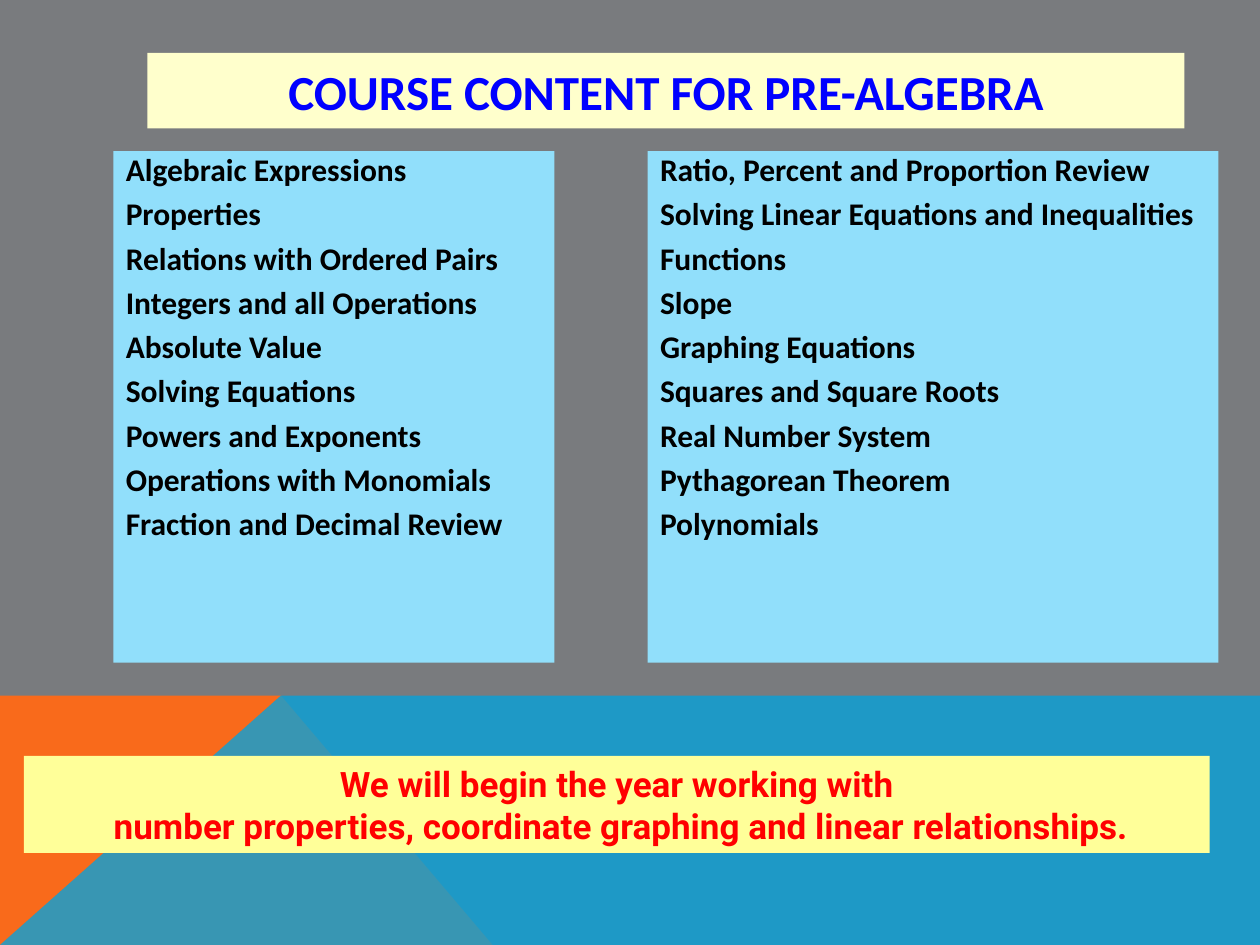
from lxml import etree
from pptx import Presentation
from pptx import util as u
from pptx.dml.color import RGBColor
from pptx.enum import shapes, text
from pptx.oxml.ns import qn

COLORS = {
    "background": "797B7E",
    "orange": "F96A1B",
    "blue": "08A1D9",
    "panel": "91DFFB",
    "title_fill": "FFFFCC",
    "title_text": "0000FF",
    "note_fill": "FFFF99",
    "note_text": "FF0000",
    "black": "000000",
}

FIRST_TOPICS = [
    "Algebraic Expressions",
    "Properties",
    "Relations with Ordered Pairs",
    "Integers and all Operations",
    "Absolute Value",
    "Solving Equations",
    "Powers and Exponents",
    "Operations with Monomials",
    "Fraction and Decimal Review",
]
SECOND_TOPICS = [
    "Ratio, Percent and Proportion Review",
    "Solving Linear Equations and Inequalities",
    "Functions",
    "Slope",
    "Graphing Equations",
    "Squares and Square Roots",
    "Real Number System",
    "Pythagorean Theorem",
    "Polynomials",
]
NOTE = [
    "We will begin the year working with",
    " number properties, coordinate graphing and linear relationships.",
]


class Deck:
    def __init__(self, width, height):
        self.prs = Presentation()
        self.prs.slide_width = u.Inches(width)
        self.prs.slide_height = u.Inches(height)
        self.s = self.prs.slides.add_slide(self.prs.slide_layouts[6])

    def color(self, name):
        return RGBColor.from_string(COLORS[name])

    def paint(self, sp, fill):
        sp.shadow.inherit = False
        sp.fill.solid()
        sp.fill.fore_color.rgb = self.color(fill)
        sp.line.fill.background()

    def background(self, fill):
        bg = self.s.background.fill
        bg.solid()
        bg.fore_color.rgb = self.color(fill)

    def polygon(self, points, fill, opacity=100):
        corners = [(u.Inches(x), u.Inches(y)) for x, y in points]
        builder = self.s.shapes.build_freeform(*corners[0])
        builder.add_line_segments(corners[1:], close=True)
        sp = builder.convert_to_shape()
        self.paint(sp, fill)
        if opacity < 100:
            rgb = sp.fill._xPr.find(qn("a:solidFill"))[0]
            etree.SubElement(rgb, qn("a:alpha")).set("val", str(opacity * 1000))

    def text_panel(self, box, fill, lines, font, size, color, centered=True):
        sp = self.s.shapes.add_shape(
            shapes.MSO_SHAPE.RECTANGLE, *[u.Inches(v) for v in box])
        self.paint(sp, fill)
        tf = sp.text_frame
        tf.word_wrap = True
        tf.vertical_anchor = text.MSO_ANCHOR.MIDDLE if centered else text.MSO_ANCHOR.TOP
        tf.text = "\n".join(lines)
        for p in tf.paragraphs:
            p.alignment = text.PP_ALIGN.CENTER if centered else text.PP_ALIGN.LEFT
            for r in p.runs:
                r.font.name = font
                r.font.size = u.Pt(size)
                r.font.bold = True
                r.font.color.rgb = self.color(color)
        return tf

    def topic_list(self, left, width, topics):
        tf = self.text_panel((left, 1.2, width, 4.06), "panel", topics,
                             "Calibri", 18, "black", centered=False)
        for p in tf.paragraphs:
            p.line_spacing = 0.8
            p.space_before = u.Pt(8)

    def note(self, box, lines):
        tf = self.text_panel(box, "note_fill", lines, "Roboto", 20, "note_text")
        tf.vertical_anchor = text.MSO_ANCHOR.TOP
        tf.word_wrap = False
        tf.auto_size = text.MSO_AUTO_SIZE.SHAPE_TO_FIT_TEXT


def main():
    deck = Deck(10, 7.5)
    deck.background("background")
    deck.polygon([(0, 7.5), (0, 5.52), (2.23, 5.52), (3.91, 7.5)], "orange")
    deck.polygon([(0, 7.5), (2.23, 5.52), (10, 5.52), (10, 7.5)], "blue", opacity=80)
    deck.topic_list(0.9, 3.5, FIRST_TOPICS)
    deck.topic_list(5.14, 4.53, SECOND_TOPICS)
    deck.text_panel((1.17, 0.42, 8.23, 0.6), "title_fill",
                    ["COURSE CONTENT FOR PRE-ALGEBRA"], "Calibri", 28, "title_text")
    deck.note((0.19, 6, 9.41, 0.77), NOTE)
    deck.prs.save("out.pptx")


if __name__ == "__main__":
    main()
